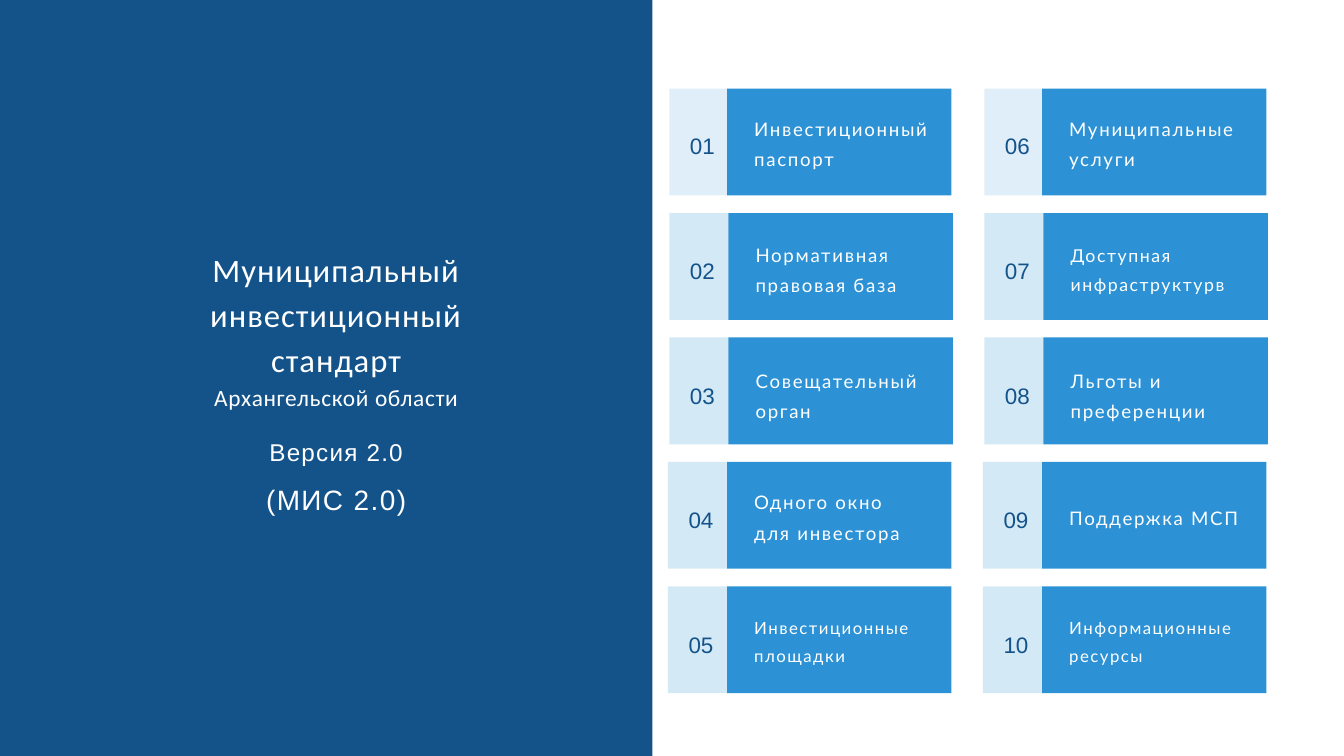
from pptx import Presentation
from pptx.dml.color import RGBColor
from pptx.enum.shapes import MSO_SHAPE as Shape
from pptx.enum.text import MSO_AUTO_SIZE as Fit, PP_ALIGN as Align
from pptx.oxml import parse_xml
from pptx.oxml.ns import nsdecls, qn
from pptx.util import Pt

NAVY = RGBColor(0x13, 0x53, 0x8A)
BLUE = RGBColor(0x2C, 0x92, 0xD5)
WHITE = RGBColor(0xFF, 0xFF, 0xFF)

TOP, PITCH, SHIFT = 95, 133.3, 337.5
TILE_W, TILE_H, NUM_W = 240.5, 114.5, 63.4

# num left, tile left, num drop, label width, tint, two (label, size, drop)
ROWS = [
    (717.1, 779, 36, 212.4, 15,
     [("Инвестиционный паспорт", 20, 23), ("Муниципальные услуги", 20, 23)]),
    (717.1, 780.5, 37.5, 183.6, 20,
     [("Нормативная правовая база", 20, 24.5), ("Доступная инфраструктурв", 19, 26)]),
    (717.1, 780.5, 37.5, 183.6, 20,
     [("Совещательный орган", 20, 26), ("Льготы и преференции", 20, 26)]),
    (715.7, 779, 37.5, 183.6, 20,
     [("Одного окно для инвестора", 20, 23), ("Поддержка МСП", 20, 39.5)]),
    (715.7, 779, 37.5, 183.6, 20,
     [("Инвестиционные площадки", 18, 26.5), ("Информационные ресурсы", 18, 26.5)]),
]


class Deck:
    def __init__(self, wide, high):
        self.prs = Presentation()
        self.prs.slide_width, self.prs.slide_height = Pt(wide), Pt(high)
        self.slide = self.prs.slides.add_slide(self.prs.slide_layouts[6])

    def rect(self, x, y, w, h, color, tint=None):
        box = self.slide.shapes.add_shape(Shape.RECTANGLE, Pt(x), Pt(y), Pt(w), Pt(h))
        box.shadow.inherit = False
        box.fill.solid()
        box.fill.fore_color.rgb = color
        box.line.fill.background()
        if tint:
            clr = box.element.spPr.find(".//" + qn("a:srgbClr"))
            clr.append(parse_xml(f'<a:alpha {nsdecls("a")} val="{tint * 1000}"/>'))

    def text(self, x, y, w, h, lines, font, color, align, lead, track):
        frame = self.slide.shapes.add_textbox(Pt(x), Pt(y), Pt(w), Pt(h)).text_frame
        frame.word_wrap = True
        frame.auto_size = Fit.SHAPE_TO_FIT_TEXT
        frame.margin_left = frame.margin_right = 0
        frame.margin_top = frame.margin_bottom = 0
        for i, (words, size) in enumerate(lines):
            para = frame.add_paragraph() if i else frame.paragraphs[0]
            para.alignment = align
            para.line_spacing = Pt(round(size * lead, 1))
            run = para.add_run()
            run.text = words
            run.font.name, run.font.size = font, Pt(size)
            run.font.color.rgb = color
            if track:
                run.font._element.set("spc", str(round(size * track * 100)))

    def number(self, x, y, num):
        self.text(x, y, 33.7, 34, [(f"{num:02}", 24)], "Arial", NAVY, Align.RIGHT, 1.62, 0)

    def label(self, x, y, w, words, size):
        self.text(x, y, w, 61, [(words, size)], "Lato", WHITE, Align.LEFT, 1.62, 0.09)

    def title(self, y, h, lines, font, lead, track):
        self.text(177, y, 366.5, h, lines, font, WHITE, Align.CENTER, lead, track)


def main():
    deck = Deck(1440, 810)
    deck.rect(0, 0, 699, 810, NAVY)
    deck.title(261.5, 176.5, [("Муниципальный инвестиционный стандарт", 35),
                              ("Архангельской области", 25)], "Calibri", 1.38, 0.03)
    deck.title(454.5, 90.5, [("Версия 2.0", 26), ("(МИС 2.0)", 30)], "Arial", 1.75, 0.05)
    for row, (num_x, tile_x, drop, wide, tint, cells) in enumerate(ROWS):
        y = TOP + row * PITCH
        for col, (words, size, fall) in enumerate(cells):
            dx = col * SHIFT
            deck.rect(num_x + dx, y, NUM_W, TILE_H, BLUE, tint)
            deck.rect(tile_x + dx, y, TILE_W, TILE_H, BLUE)
            deck.number(num_x + dx + 15, y + drop, row + 1 + col * len(ROWS))
            deck.label(tile_x + dx + 29, y + fall, wide, words, size)
    deck.prs.save("out.pptx")


if __name__ == "__main__":
    main()
